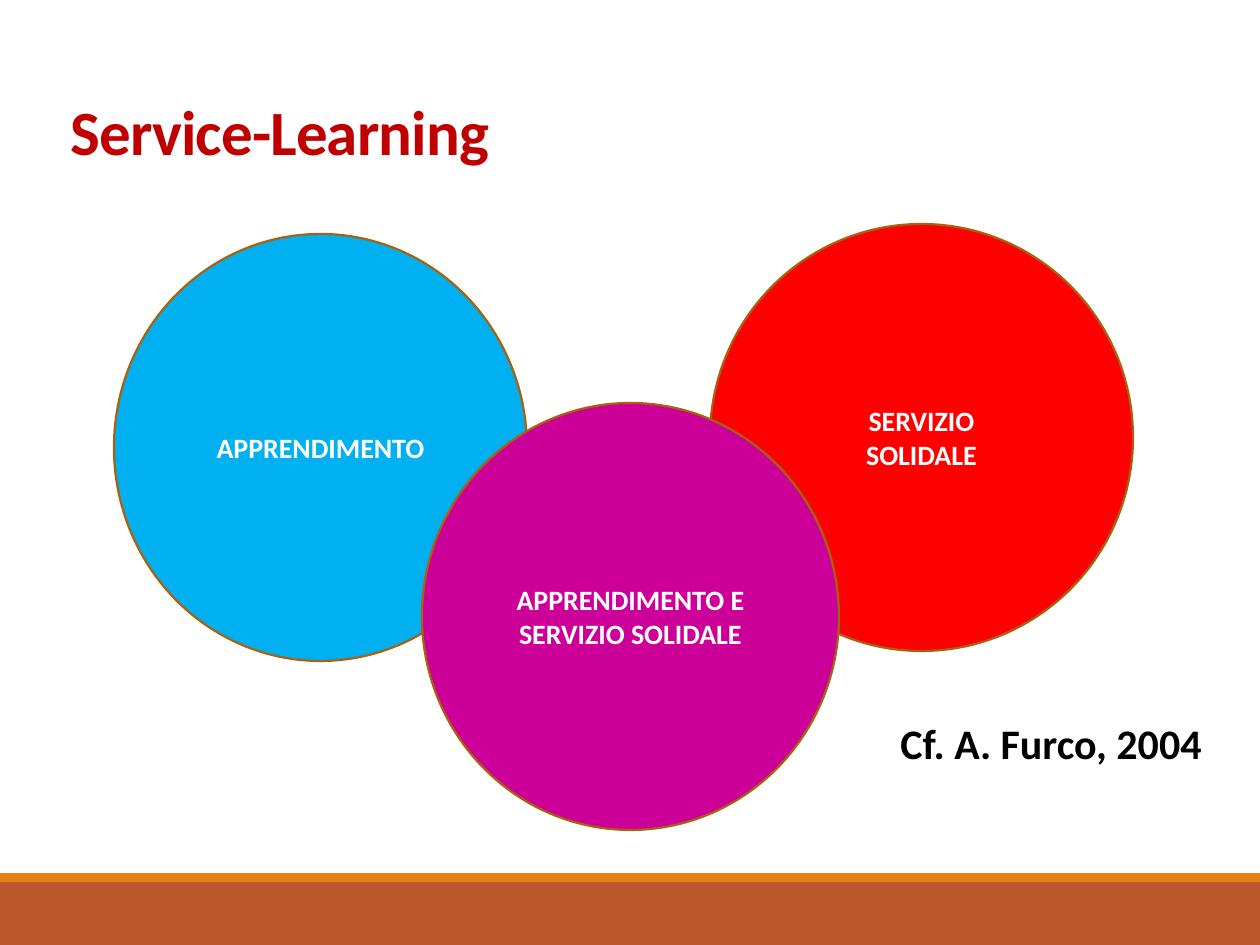
from pptx import Presentation
from pptx.dml.color import RGBColor
from pptx.enum.shapes import MSO_SHAPE
from pptx.enum.text import MSO_ANCHOR, MSO_AUTO_SIZE, PP_ALIGN
from pptx.util import Pt

EMU_PER_PX = 914400 / 126
RUST = RGBColor(0xBD, 0x58, 0x2C)
ORANGE = RGBColor(0xE4, 0x83, 0x12)
DARK_RED = RGBColor(0xC0, 0x00, 0x00)
BROWN = RGBColor(0xA9, 0x61, 0x0D)
BLUE = RGBColor(0x00, 0xB0, 0xF0)
RED = RGBColor(0xFF, 0x00, 0x00)
MAGENTA = RGBColor(0xCC, 0x00, 0x99)
WHITE = RGBColor(0xFF, 0xFF, 0xFF)
BLACK = RGBColor(0x00, 0x00, 0x00)


def px(*lengths):
    return [round(length * EMU_PER_PX) for length in lengths]


def write(frame, text, size, color, align):
    frame.text = text
    frame.word_wrap = True
    for paragraph in frame.paragraphs:
        paragraph.alignment = align
        for run in paragraph.runs:
            run.font.name = "Calibri"
            run.font.size = Pt(size)
            run.font.bold = True
            run.font.color.rgb = color


prs = Presentation()
prs.slide_width, prs.slide_height = px(1260, 945)
slide = prs.slides.add_slide(prs.slide_layouts[5])

for top, height, color in [(882, 63, RUST), (873, 9, ORANGE)]:
    band = slide.shapes.add_shape(MSO_SHAPE.RECTANGLE, *px(0, top, 1260, height))
    band.shadow.inherit = False
    band.fill.solid()
    band.fill.fore_color.rgb = color
    band.line.fill.background()

heading = slide.shapes.title
heading.left, heading.top, heading.width, heading.height = px(58, 66, 572, 109)
write(heading.text_frame, "Service-Learning", 36, DARK_RED, PP_ALIGN.LEFT)
heading.text_frame.auto_size = MSO_AUTO_SIZE.NONE
heading.text_frame.vertical_anchor = MSO_ANCHOR.BOTTOM
heading.text_frame.paragraphs[0].line_spacing = 0.85
heading.text_frame.paragraphs[0].runs[0].font._element.set("spc", "-50")

circles = [
    (114, 234, 413, "APPRENDIMENTO", BLUE),
    (710, 224, 423, "SERVIZIO\nSOLIDALE", RED),
    (422, 403, 417, "APPRENDIMENTO E SERVIZIO SOLIDALE", MAGENTA),
]
for left, top, width, label, color in circles:
    circle = slide.shapes.add_shape(MSO_SHAPE.OVAL, *px(left, top, width, 427))
    circle.shadow.inherit = False
    circle.fill.solid()
    circle.fill.fore_color.rgb = color
    circle.line.color.rgb = BROWN
    circle.line.width = Pt(1.25)
    write(circle.text_frame, label, 16, WHITE, PP_ALIGN.CENTER)
    circle.text_frame.vertical_anchor = MSO_ANCHOR.MIDDLE

citation = slide.shapes.add_textbox(*px(888, 711, 339, 63))
write(citation.text_frame, "Cf. A. Furco, 2004", 24, BLACK, PP_ALIGN.LEFT)

prs.save("out.pptx")
